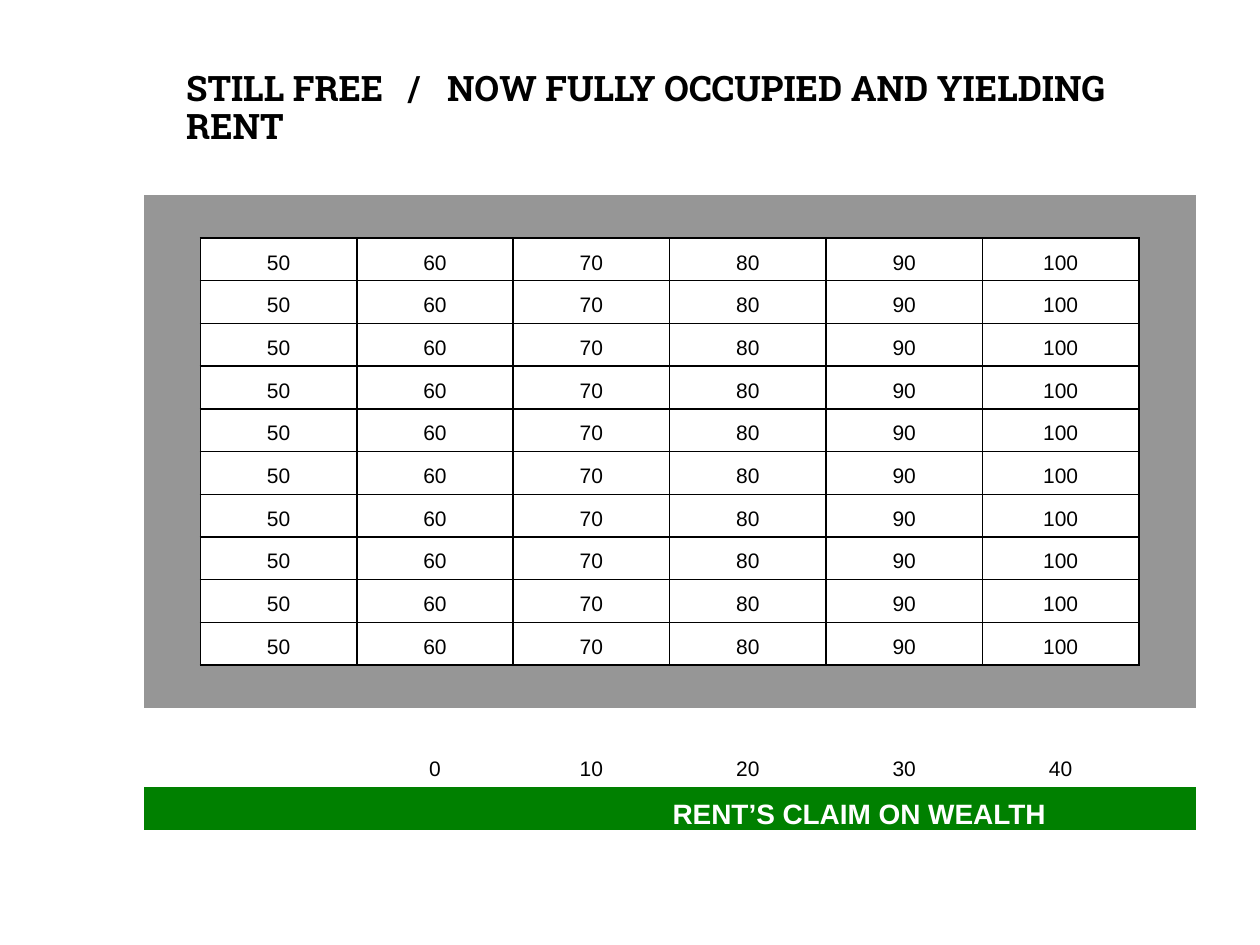
from lxml import etree
from pptx import Presentation
from pptx.dml.color import RGBColor
from pptx.enum.text import MSO_ANCHOR, PP_ALIGN
from pptx.oxml.ns import qn
from pptx.util import Inches, Pt

BOTTOM, CENTER = MSO_ANCHOR.BOTTOM, PP_ALIGN.CENTER
BLACK, WHITE, GRAY, GREEN = "000000", "FFFFFF", "969696", "008000"
ROWS, COLS = 14, 8
FRAME_ROWS = 12  # rows of the framed field, its margins included
RENT_ROW, BAR_ROW = 12, 13
YIELDS = range(50, 101, 10)
RENTS = range(0, 41, 10)
# Side of a cell and the step to the neighbour that shares it
SIDES = {"lnL": (0, -1), "lnR": (0, 1), "lnT": (-1, 0), "lnB": (1, 0)}


def color(value):
    return RGBColor.from_string(value)


def add_run(p, text, size, value=BLACK, font="Arial", bold=False):
    r = p.add_run()
    r.text = text
    r.font.size, r.font.name, r.font.bold = Pt(size), font, bold
    r.font.color.rgb = color(value)


def add_text(s, box):
    tf = s.shapes.add_textbox(*map(Inches, box)).text_frame
    tf.word_wrap = True
    return tf.paragraphs[0]


def in_field(row, col):
    return 1 <= row <= FRAME_ROWS - 2 and 1 <= col <= COLS - 2


def set_borders(cell, row, col):
    tc_pr = cell._tc.get_or_add_tcPr()
    for side, (down, right) in SIDES.items():
        ln = etree.SubElement(tc_pr, qn("a:" + side), w=str(Pt(1)))
        if in_field(row, col) or in_field(row + down, col + right):
            fill = etree.SubElement(ln, qn("a:solidFill"))
            etree.SubElement(fill, qn("a:srgbClr"), val=BLACK)
        else:
            etree.SubElement(ln, qn("a:noFill"))


def set_fill(cell, row, col):
    if row == BAR_ROW or (row < FRAME_ROWS and not in_field(row, col)):
        cell.fill.solid()
        cell.fill.fore_color.rgb = color(GREEN if row == BAR_ROW else GRAY)
    else:
        cell.fill.background()


def cell_value(row, col):
    if in_field(row, col):
        return YIELDS[col - 1]
    if row == RENT_ROW and 2 <= col <= COLS - 2:
        return RENTS[col - 2]
    return None


def add_land_table(s, box):
    left, top, width, height = box
    margin, rent_height = 0.45, 0.63
    col_width = (width - 2 * margin) / (COLS - 2)
    row_height = (height - rent_height) / (ROWS - 1)
    table = s.shapes.add_table(ROWS, COLS, *map(Inches, box)).table
    table.first_row = table.horz_banding = False
    for i, column in enumerate(table.columns):
        column.width = Inches(margin if i in (0, COLS - 1) else col_width)
    for i, line in enumerate(table.rows):
        line.height = Inches(rent_height if i == RENT_ROW else row_height)

    for row in range(ROWS):
        for col in range(COLS):
            cell = table.cell(row, col)
            set_borders(cell, row, col)
            set_fill(cell, row, col)
            value = cell_value(row, col)
            if value is None:
                cell.margin_top = cell.margin_bottom = 0
                continue
            cell.vertical_anchor = BOTTOM
            p = cell.text_frame.paragraphs[0]
            p.alignment = CENTER
            add_run(p, str(value), 12)


def add_title(s, box):
    p = add_text(s, box)
    p.line_spacing = 0.9
    # Tab stops set the slash apart from the words on each side
    tabs = etree.SubElement(p._p.get_or_add_pPr(), qn("a:tabLst"))
    for stop in (1.76, 2.07):
        etree.SubElement(tabs, qn("a:tab"), pos=str(Inches(stop)), algn="l")
    add_run(p, "STILL FREE\t/\tNOW FULLY OCCUPIED AND YIELDING RENT", 20,
            font="Roboto Slab", bold=True)


def add_bar_label(s, box):
    add_run(add_text(s, box), "RENT’S CLAIM ON WEALTH", 16, WHITE, bold=True)


def main():
    prs = Presentation()
    prs.slide_width, prs.slide_height = Inches(10), Inches(7.5)
    s = prs.slides.add_slide(prs.slide_layouts[6])
    add_land_table(s, (1.14, 1.55, 8.35, 5.04))
    add_bar_label(s, (5.24, 6.27, 3.47, 0.37))
    add_title(s, (1.38, 0.52, 7.64, 0.77))
    prs.save("out.pptx")


if __name__ == "__main__":
    main()
